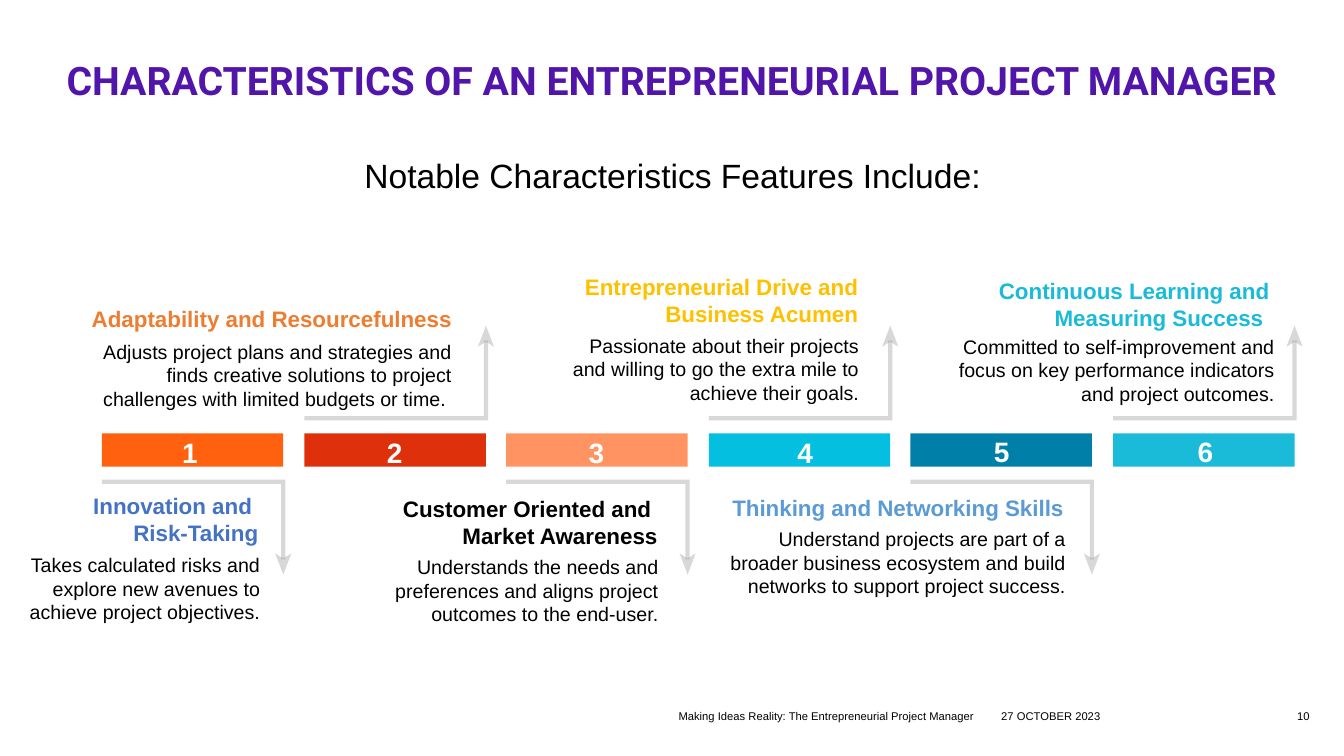
from dataclasses import dataclass

from lxml import etree
from pptx import Presentation
from pptx.dml.color import RGBColor
from pptx.enum.shapes import MSO_SHAPE as Shape
from pptx.enum.text import MSO_ANCHOR as Anchor, MSO_AUTO_SIZE as Fit, PP_ALIGN as Align
from pptx.oxml.ns import qn
from pptx.util import Pt

PX = 9144  # 100 px to the inch
HEX = {
    "title": "5115A9", "ink": "000000", "num": "FDFFFE", "grey": "808080",
    "orange": "FF610F", "red": "DD300B", "peach": "FF9361",
    "cyan": "05BFE0", "teal": "0080A8", "aqua": "1ABAD9",
    "blue": "4472C4", "rust": "ED7D31", "gold": "FFC000", "sky": "5B9BD5",
}
BAR_W, BAR_H, PITCH = 180, 33, 200.6


@dataclass
class Step:
    bar: str
    num: tuple   # number box offset from the bar
    tint: str
    head: tuple  # heading box: offset from the bar, width, height
    lines: list
    body: tuple  # body box, likewise
    text: str


STEPS = [
    Step("orange", (37, -3), "blue", (-94, 53, 259, 64),
         ["Innovation and ", "Risk-Taking"], (-113, 114, 280, 81),
         "Takes calculated risks and explore new avenues to achieve project objectives."),
    Step("red", (39, -3), "rust", (-238, -132, 394, 37),
         ["Adaptability and Resourcefulness"], (-230, -98, 386, 81),
         "Adjusts project plans and strategies and finds creative solutions to project "
         "challenges with limited budgets or time. "),
    Step("peach", (39, -3), "ink", (-196, 56, 356, 64),
         ["Customer Oriented and ", "Market Awareness"], (-158, 116, 319, 81),
         "Understands the needs and preferences and aligns project outcomes to the end-user."),
    Step("cyan", (45, -3), "gold", (-157, -164, 315, 64),
         ["Entrepreneurial Drive and Business Acumen"], (-164, -104, 323, 81),
         "Passionate about their projects and willing to go the extra mile to achieve their goals."),
    Step("teal", (40, -4), "sky", (-221, 55, 383, 37),
         ["Thinking and Networking Skills"], (-193, 88, 357, 81),
         "Understand projects are part of a broader business ecosystem and build networks "
         "to support project success."),
    Step("aqua", (41, -4), "aqua", (-188, -160, 353, 64),
         ["Continuous Learning and Measuring Success "], (-199, -103, 369, 81),
         "Committed to self-improvement and focus on key performance indicators "
         "and project outcomes."),
]


def color(name):
    return RGBColor.from_string(HEX[name])


def place(shape, box):
    shape.left, shape.top, shape.width, shape.height = (n * PX for n in box)


def write(frame, lines, size, tint="ink", bold=False, align=Align.LEFT, face="Arial"):
    frame.word_wrap = True
    for i, line in enumerate(lines):
        para = frame.add_paragraph() if i else frame.paragraphs[0]
        para.alignment = align
        run = para.add_run()
        run.text = line
        font = run.font
        font.name, font.size, font.bold = face, Pt(size), bold
        font.color.rgb = color(tint)


def flush(frame, anchor):
    frame.margin_left = frame.margin_right = frame.margin_top = frame.margin_bottom = 0
    frame.vertical_anchor = anchor
    frame.auto_size = Fit.NONE


def label(slide, box, lines, size, **style):
    frame = slide.shapes.add_textbox(*(n * PX for n in box)).text_frame
    write(frame, lines, size, **style)
    frame.auto_size = Fit.SHAPE_TO_FIT_TEXT
    return frame


def outline(slide, points, close):
    pen = slide.shapes.build_freeform(*points[0], scale=PX)
    pen.add_line_segments(points[1:], close=close)
    shape = pen.convert_to_shape()
    shape.shadow.inherit = False
    return shape


def tint_grey(fill):
    fill.solid()
    fill.fore_color.rgb = color("grey")


def fade(shape):
    for node in shape._element.spPr.iter(qn("a:srgbClr")):
        etree.SubElement(node, qn("a:alpha")).set("val", "30000")


def hook(slide, x, y, way):
    """Bent line along a bar, with an arrowhead; way is 1 for down, -1 for up."""
    end, tip = x + BAR_W, y + 92 * way
    line = outline(slide, [(x, y), (end, y), (end, y + 77 * way)], False)
    line.fill.background()
    line.line.width = Pt(3)
    tint_grey(line.line.fill)
    fade(line)
    etree.SubElement(line.line._ln, qn("a:miter")).set("lim", "800000")

    barb = tip - 21 * way
    head = outline(slide, [(end, tip), (end - 8, barb), (end, tip - 16 * way),
                           (end + 8, barb)], True)
    head.line.fill.background()
    tint_grey(head.fill)
    fade(head)


def draw_step(slide, x, y, index, step):
    def near(box):
        return (x + box[0], y + box[1], *box[2:])

    # Bar and its number
    bar = slide.shapes.add_shape(Shape.RECTANGLE, x * PX, y * PX, BAR_W * PX, BAR_H * PX)
    bar.shadow.inherit = False
    bar.fill.solid()
    bar.fill.fore_color.rgb = color(step.bar)
    bar.line.fill.background()

    # Odd steps point down, even steps point up
    if index % 2:
        hook(slide, x, y - 15, -1)
    else:
        hook(slide, x, y + BAR_H + 15, 1)

    label(slide, near((*step.num, 101, 44)), [str(index + 1)], 20,
          tint="num", bold=True, align=Align.CENTER)

    # Heading and body
    label(slide, near(step.head), step.lines, 16, tint=step.tint, bold=True, align=Align.RIGHT)
    label(slide, near(step.body), [step.text], 14, align=Align.RIGHT)


def draw_top(slide):
    title = slide.shapes.title
    place(title, (34, 33, 1264, 98))
    write(title.text_frame, ["CHARACTERISTICS OF AN ENTREPRENEURIAL PROJECT MANAGER"], 28,
          tint="title", bold=True, align=Align.CENTER, face="Roboto")
    title.text_frame.paragraphs[0].line_spacing = 0.9
    flush(title.text_frame, Anchor.MIDDLE)
    lead = label(slide, (89, 146, 1156, 56), ["Notable Characteristics Features Include:"], 24,
                 align=Align.CENTER)
    flush(lead, Anchor.MIDDLE)


def draw_foot(slide, y):
    for x, width, text, align in [
        (673, 306, "Making Ideas Reality: The Entrepreneurial Project Manager", Align.LEFT),
        (993, 199, "27 OCTOBER 2023", Align.LEFT),
        (1254, 45, "10", Align.RIGHT),
    ]:
        flush(label(slide, (x, y, width, 22), [text], 8, align=align), Anchor.BOTTOM)


def main():
    deck = Presentation()
    deck.slide_width, deck.slide_height = 1333 * PX, 750 * PX
    slide = deck.slides.add_slide(deck.slide_layouts[5])
    draw_top(slide)
    for index, step in enumerate(STEPS):
        draw_step(slide, 101 + round(PITCH * index), 430, index, step)
    draw_foot(slide, 695)
    deck.save("out.pptx")


if __name__ == "__main__":
    main()
